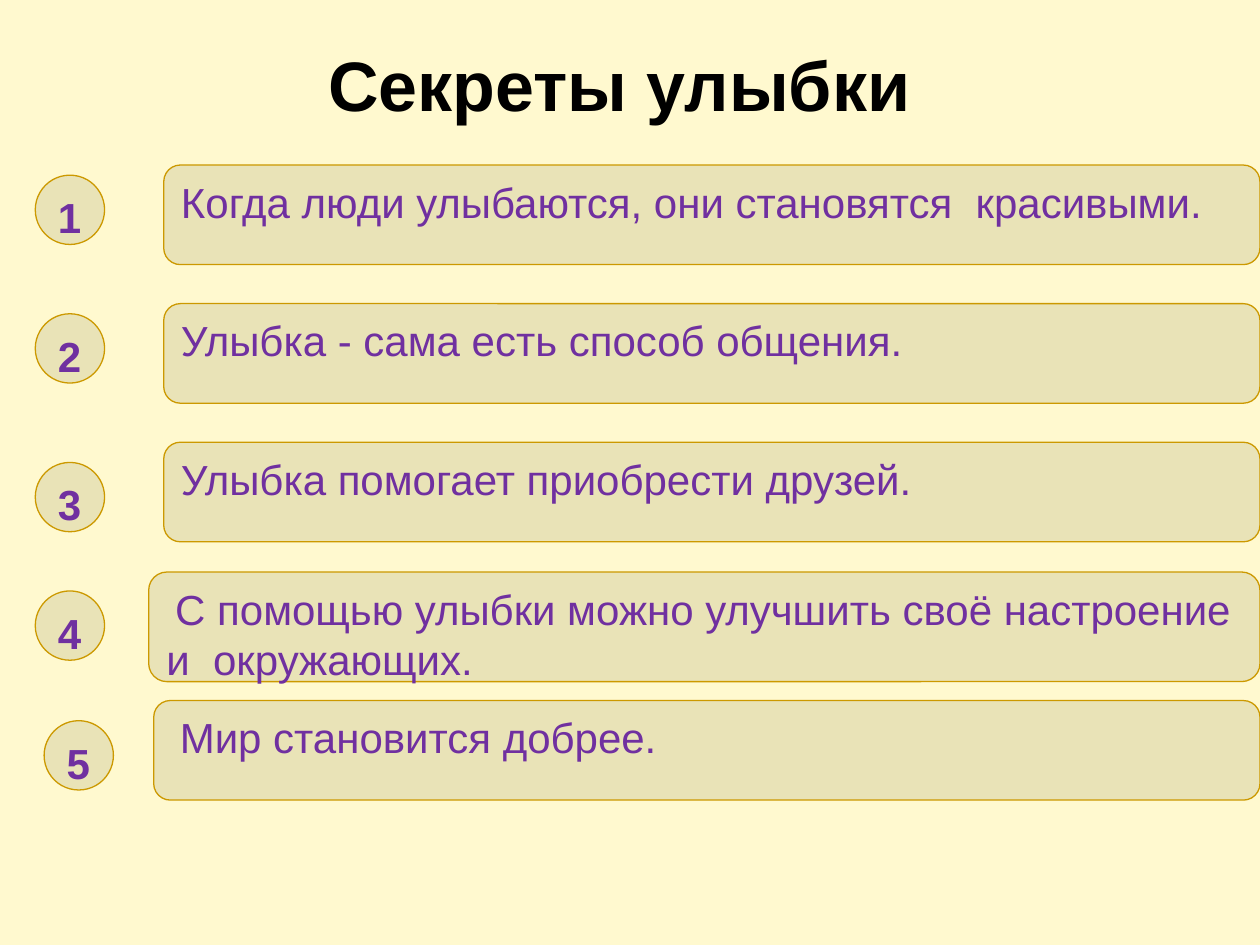
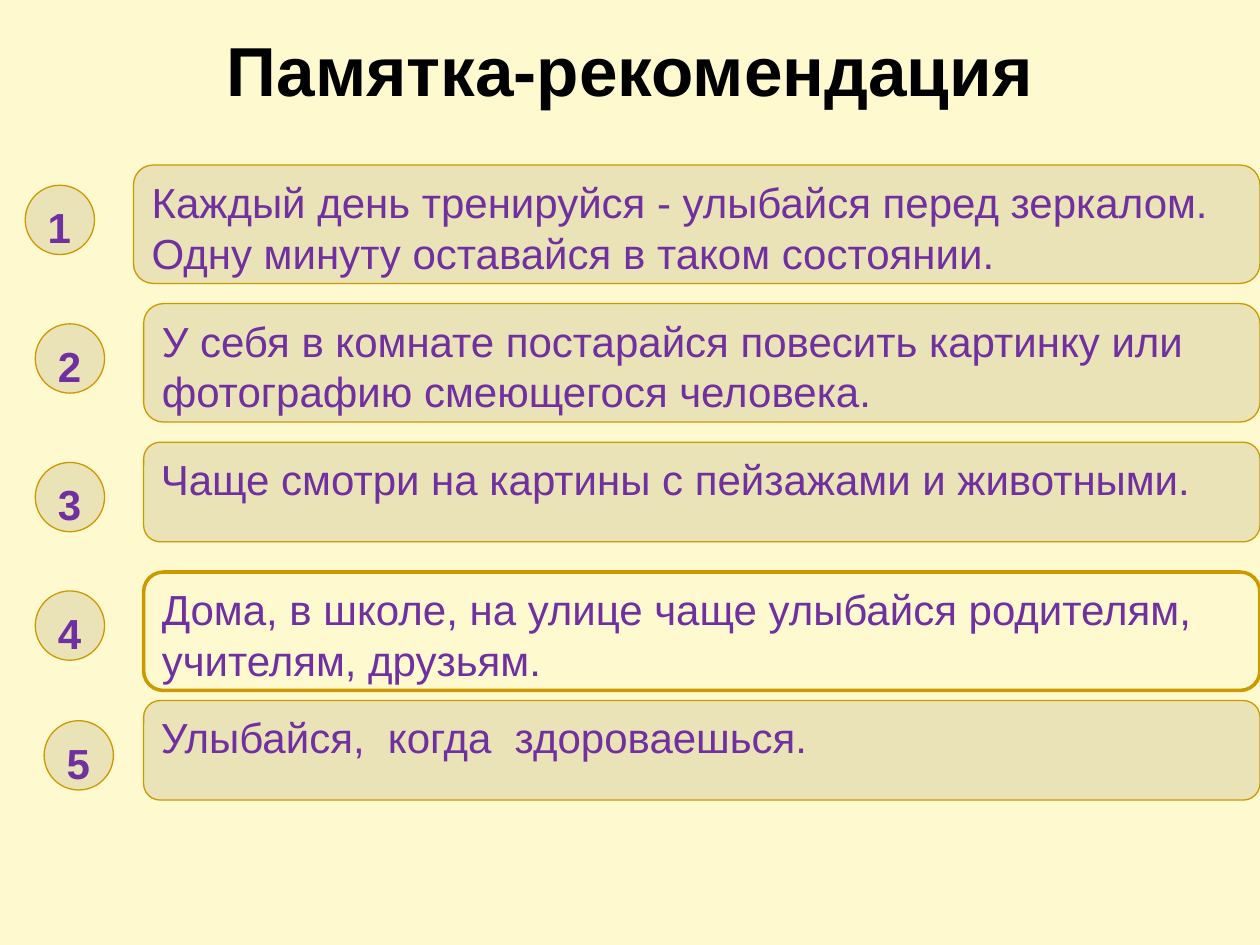
import pptx
import pptx.util
import pptx.dml.color
import pptx.enum.shapes
import pptx.enum.text

Inches = pptx.util.Inches
Pt = pptx.util.Pt
RGBColor = pptx.dml.color.RGBColor
Shape = pptx.enum.shapes.MSO_SHAPE
Anchor = pptx.enum.text.MSO_ANCHOR
Align = pptx.enum.text.PP_ALIGN

CREAM = RGBColor(0xFF, 0xF9, 0xCF)
SAND = RGBColor(0xE9, 0xE3, 0xB7)
GOLD = RGBColor(0xCC, 0x99, 0x00)
PURPLE = RGBColor(0x70, 0x30, 0xA0)
BLACK = RGBColor(0x00, 0x00, 0x00)

FONT = "Arial"
SLIDE_WIDTH, SLIDE_HEIGHT = 10, 7.5
CARD_TOPS = [1.31, 2.41, 3.51, 4.54, 5.56]
BADGE_SIZE = 0.55
LOW, TALL = 0.79, 0.94

SLIDES = [
    {
        "title": "Секреты улыбки",
        "title_box": (0.58, 0, 8.67, 1.33),
        "title_size": 40,
        "badges": [(0.28, 1.39), (0.28, 2.49), (0.28, 3.67), (0.28, 4.69), (0.35, 5.72)],
        "cards": [
            {"text": "Когда люди улыбаются, они становятся  красивыми.", "left": 1.3, "height": LOW},
            {"text": "Улыбка - сама есть способ общения.", "left": 1.3, "height": LOW},
            {"text": "Улыбка помогает приобрести друзей.", "left": 1.3, "height": LOW},
            {"text": "С помощью улыбки можно улучшить своё настроение и  окружающих.",
             "left": 1.18, "height": 0.87, "indent": 0.07},
            {"text": "Мир становится добрее.", "left": 1.22, "height": LOW, "indent": 0.07},
        ],
    },
    {
        "title": "Памятка-рекомендация",
        "title_box": (0, 0, 10, 1.09),
        "title_size": 39.6,
        "badges": [(0.2, 1.47), (0.28, 2.57), (0.28, 3.67), (0.28, 4.69), (0.35, 5.72)],
        "cards": [
            {"text": "Каждый день тренируйся - улыбайся перед зеркалом. "
                     "Одну минуту оставайся в таком состоянии.", "left": 1.06, "height": TALL},
            {"text": "У себя в комнате постарайся повесить картинку или "
                     "фотографию смеющегося человека.", "left": 1.14, "height": TALL},
            {"text": "Чаще смотри на картины с пейзажами и животными.", "left": 1.14, "height": LOW},
            {"text": "Дома, в школе, на улице чаще улыбайся родителям, учителям, друзьям.",
             "left": 1.14, "height": TALL, "fill": CREAM, "line_width": 2},
            {"text": "Улыбайся,  когда  здороваешься.", "left": 1.14, "height": LOW},
        ],
    },
]


def write(paragraph, text, size, color, bold, alignment):
    paragraph.alignment = alignment
    run = paragraph.add_run()
    run.text = text
    run.font.name = FONT
    run.font.size = Pt(size)
    run.font.bold = bold
    run.font.color.rgb = color


def add_title(slide, text, box, size):
    title = slide.shapes.title
    title.left, title.top, title.width, title.height = map(Inches, box)
    title.text_frame.vertical_anchor = Anchor.MIDDLE
    write(title.text_frame.paragraphs[0], text, size, BLACK, True, Align.CENTER)


def add_panel(slide, kind, box, text, bold=False, fill=SAND, line_width=0.75, indent=0):
    shape = slide.shapes.add_shape(kind, *map(Inches, box))
    shape.shadow.inherit = False
    shape.fill.solid()
    shape.fill.fore_color.rgb = fill
    shape.line.color.rgb = GOLD
    shape.line.width = Pt(line_width)
    frame = shape.text_frame
    frame.word_wrap = True
    frame.vertical_anchor = Anchor.TOP
    paragraph = frame.paragraphs[0]
    write(paragraph, text, 24, PURPLE, bold, Align.LEFT)
    if indent:
        paragraph._p.get_or_add_pPr().set("indent", str(Inches(indent)))


def build_slide(presentation, content):
    slide = presentation.slides.add_slide(presentation.slide_layouts[5])
    add_title(slide, content["title"], content["title_box"], content["title_size"])
    rows = zip(CARD_TOPS, content["cards"], content["badges"])
    for number, (top, card, badge) in enumerate(rows, start=1):
        left = card["left"]
        add_panel(slide, Shape.ROUNDED_RECTANGLE,
                  (left, top, SLIDE_WIDTH - left, card["height"]), card["text"],
                  fill=card.get("fill", SAND),
                  line_width=card.get("line_width", 0.75),
                  indent=card.get("indent", 0))
        add_panel(slide, Shape.OVAL, (*badge, BADGE_SIZE, BADGE_SIZE), str(number), bold=True)


def main():
    presentation = pptx.Presentation()
    presentation.slide_width = Inches(SLIDE_WIDTH)
    presentation.slide_height = Inches(SLIDE_HEIGHT)
    background = presentation.slide_master.background.fill
    background.solid()
    background.fore_color.rgb = CREAM
    for content in SLIDES:
        build_slide(presentation, content)
    presentation.save("out.pptx")


if __name__ == "__main__":
    main()
